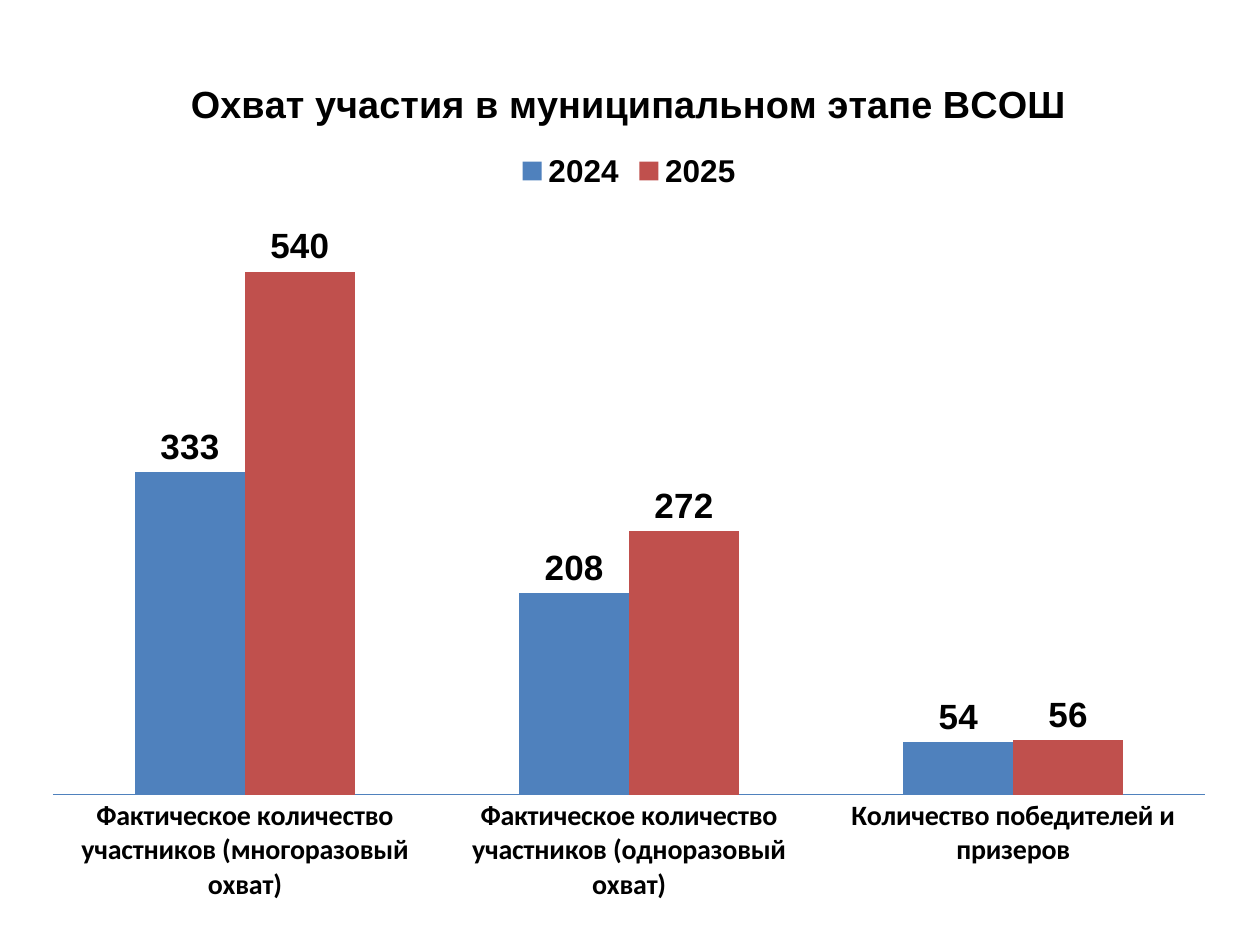
from pptx import Presentation
from pptx.chart.data import CategoryChartData
from pptx.dml.color import RGBColor
from pptx.enum.chart import XL_CHART_TYPE, XL_LABEL_POSITION, XL_LEGEND_POSITION, XL_TICK_MARK
from pptx.oxml import parse_xml
from pptx.oxml.ns import nsdecls
from pptx.util import Pt

COLUMN = XL_CHART_TYPE.COLUMN_CLUSTERED
ABOVE = XL_LABEL_POSITION.OUTSIDE_END
TOP = XL_LEGEND_POSITION.TOP
NO_TICK = XL_TICK_MARK.NONE

BLACK = RGBColor(0x00, 0x00, 0x00)
BLUE = RGBColor(0x4F, 0x81, 0xBD)
RED = RGBColor(0xC0, 0x50, 0x4D)

TITLE = "Охват участия в муниципальном этапе ВСОШ"
GROUPS = [
    "Фактическое количество участников (многоразовый охват)",
    "Фактическое количество участников (одноразовый охват)",
    "Количество победителей и призеров",
]
YEARS = [
    ("2024", (333, 208, 54), BLUE),
    ("2025", (540, 272, 56), RED),
]
FRAME = {"x": 0.02, "y": 0.19, "w": 0.96, "h": 0.67}


def assign(item, values):
    for name, value in values.items():
        setattr(item, name, value)


class Deck:
    head = "Arial"
    body = "Calibri"

    def __init__(self, width, height):
        self.file = Presentation()
        assign(self.file, {"slide_width": Pt(width), "slide_height": Pt(height)})
        self.slide = self.file.slides.add_slide(self.file.slide_layouts[6])

    def font(self, font, size, face):
        assign(font, {"size": Pt(size), "name": face, "bold": True})
        font.color.rgb = BLACK

    def chart(self, left, top, width, height):
        data = CategoryChartData()
        data.categories = GROUPS
        for year, counts, color in YEARS:
            data.add_series(year, counts)
        box = map(Pt, (left, top, width, height))
        chart = self.slide.shapes.add_chart(COLUMN, *box, data).chart
        self.font(chart.font, 18, self.body)
        return chart

    def title(self, chart, text):
        chart.has_title = True
        frame = chart.chart_title.text_frame
        frame.text = text
        self.font(frame.paragraphs[0].runs[0].font, 21.6, self.head)
        chart.chart_title.include_in_layout = False

    def legend(self, chart):
        chart.has_legend = True
        assign(chart.legend, {"position": TOP, "include_in_layout": False})
        self.font(chart.legend.font, 18, self.head)

    def axes(self, chart):
        axis = chart.category_axis
        assign(axis, {"major_tick_mark": NO_TICK, "minor_tick_mark": NO_TICK})
        self.font(axis.tick_labels.font, 16, self.body)
        axis.format.line.color.rgb = BLUE
        axis.format.line.width = Pt(0.75)
        assign(chart.value_axis, {
            "visible": False,
            "has_major_gridlines": False,
            "minimum_scale": 0,
            "maximum_scale": 600,
        })

    def bars(self, chart):
        plot = chart.plots[0]
        assign(plot, {"gap_width": 150, "overlap": 0, "vary_by_categories": False})
        for bar, (year, counts, color) in zip(plot.series, YEARS):
            bar.format.fill.solid()
            bar.format.fill.fore_color.rgb = color
            labels = bar.data_labels
            assign(labels, {"show_value": True, "position": ABOVE})
            self.font(labels.font, 20, self.head)

    def place(self, chart, frame):
        area = chart.plots[0]._element.getparent()
        for old in area.xpath("c:layout"):
            area.remove(old)
        modes = '<c:xMode val="edge"/><c:yMode val="edge"/>'
        sizes = "".join(f'<c:{key} val="{part}"/>' for key, part in frame.items())
        area.insert(0, parse_xml(
            f'<c:layout {nsdecls("c")}><c:manualLayout><c:layoutTarget val="inner"/>'
            f"{modes}{sizes}</c:manualLayout></c:layout>"
        ))


def main():
    deck = Deck(720, 540)
    chart = deck.chart(16.5, 28, 686, 495.5)
    deck.title(chart, TITLE)
    deck.legend(chart)
    deck.axes(chart)
    deck.bars(chart)
    deck.place(chart, FRAME)
    deck.file.save("out.pptx")


if __name__ == "__main__":
    main()
